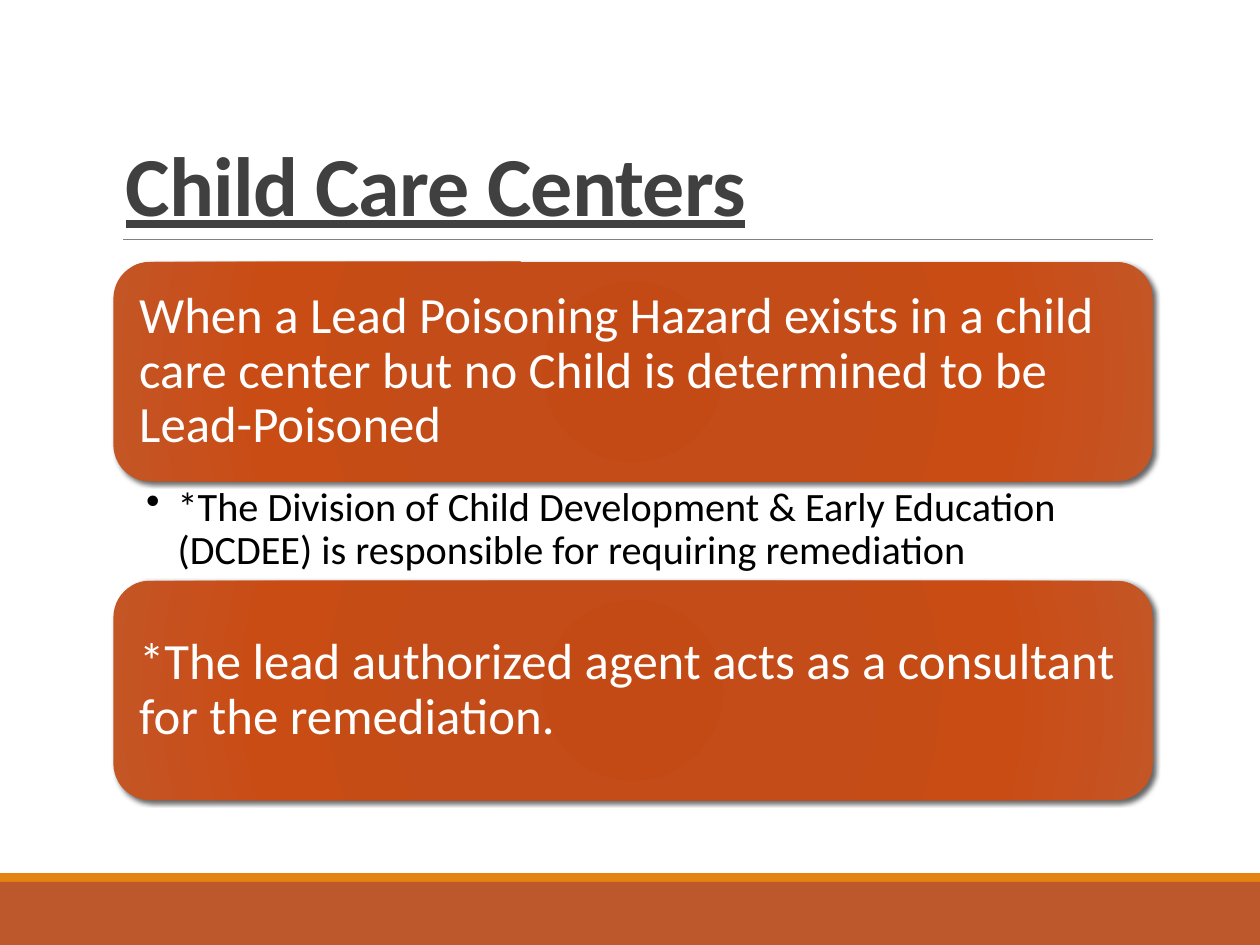
import lxml.etree
import pptx
import pptx.util
import pptx.dml.color
import pptx.enum.shapes
import pptx.enum.text
import pptx.oxml
import pptx.oxml.ns

Inches = pptx.util.Inches
Pt = pptx.util.Pt
qn = pptx.oxml.ns.qn
RGB = pptx.dml.color.RGBColor.from_string
SHAPE = pptx.enum.shapes.MSO_SHAPE
ANCHOR = pptx.enum.text.MSO_ANCHOR
ALIGN = pptx.enum.text.PP_ALIGN

HUES = {
    "title": "404040",
    "rule": "808080",
    "strip": "E48312",
    "foot": "BD582C",
    "white": "FFFFFF",
    "black": "000000",
}
STOPS = [(0, "C44A15"), (34, "C34C18"), (70, "C94C15"), (100, "C45525")]
NS = 'xmlns:a="http://schemas.openxmlformats.org/drawingml/2006/main"'
GLOW = "".join(
    f'<a:gs pos="{pos * 1000}"><a:srgbClr val="{hue}"/></a:gs>' for pos, hue in STOPS
)
GRAD = (
    f'<a:gradFill {NS} rotWithShape="1"><a:gsLst>{GLOW}</a:gsLst><a:path path="circle">'
    '<a:fillToRect l="100000" t="100000" r="100000" b="100000"/></a:path></a:gradFill>'
)
SHADE = (
    f'<a:outerShdw {NS} blurRad="{Pt(3)}" dist="{Pt(2)}" dir="2700000" rotWithShape="0">'
    f'<a:srgbClr val="{HUES["black"]}"><a:alpha val="60000"/></a:srgbClr></a:outerShdw>'
)


def write(shape, text, size, hue, anchor=ANCHOR.TOP, pad=(0.1, 0.05, 0.1, 0.05),
          lead=0.9, bold=False, line=False, track=0, dot=None):
    frame = shape.text_frame
    frame.word_wrap = True
    frame.vertical_anchor = anchor
    frame.margin_left, frame.margin_top, frame.margin_right, frame.margin_bottom = map(Inches, pad)
    para = frame.paragraphs[0]
    para.alignment = ALIGN.LEFT
    para.line_spacing = lead
    run = para.add_run()
    run.text = text
    font = run.font
    font.name = "Calibri"
    font.size = Pt(size)
    font.bold = bold
    font.underline = line
    font.color.rgb = RGB(HUES[hue])
    if track:
        font._element.set("spc", str(int(track * 100)))
    if dot:
        props = para._p.get_or_add_pPr()
        props.set("marL", str(Inches(0.25)))
        props.set("indent", str(Inches(-0.25)))
        lxml.etree.SubElement(props, qn("a:buChar")).set("char", dot)


deck = pptx.Presentation()
deck.slide_width = Inches(10)
deck.slide_height = Inches(7.5)
slide = deck.slides.add_slide(deck.slide_layouts[6])
shapes = slide.shapes

left, width = Inches(0.9), Inches(8.25)

rule = shapes.add_connector(
    pptx.enum.shapes.MSO_CONNECTOR.STRAIGHT,
    Inches(0.98), Inches(1.9), Inches(9.15), Inches(1.9),
)
rule.line.color.rgb = RGB(HUES["rule"])
rule.line.width = Pt(0.5)
lxml.etree.SubElement(rule._element.spPr, qn("a:effectLst"))

title = shapes.add_textbox(left, Inches(0.31), width, Inches(1.59))
write(title, "Child Care Centers", 48, "title", anchor=ANCHOR.BOTTOM,
      lead=0.85, bold=True, line=True, track=-0.5)

for hue, top, high in [("strip", 6.93, 0.07), ("foot", 7, 0.5)]:
    bar = shapes.add_shape(SHAPE.RECTANGLE, 0, Inches(top), Inches(10), Inches(high))
    bar.shadow.inherit = False
    bar.fill.solid()
    bar.fill.fore_color.rgb = RGB(HUES[hue])
    bar.line.fill.background()

cards = [
    (2.08, "When a Lead Poisoning Hazard exists in a child care center "
           "but no Child is determined to be Lead-Poisoned"),
    (4.61, "*The lead authorized agent acts as a consultant for the remediation."),
]
for top, text in cards:
    card = shapes.add_shape(SHAPE.ROUNDED_RECTANGLE, left, Inches(top), width, Inches(1.74))
    card.line.fill.background()
    card.shadow.inherit = False
    props = card._element.spPr
    props.find(qn("a:prstGeom")).addnext(pptx.oxml.parse_xml(GRAD))
    props.find(qn("a:effectLst")).append(pptx.oxml.parse_xml(SHADE))
    write(card, text, 29, "white", anchor=ANCHOR.MIDDLE, pad=(0.12,) * 4)

note = shapes.add_textbox(left, Inches(3.82), width, Inches(0.79))
write(note, "*The Division of Child Development & Early Education (DCDEE) "
      "is responsible for requiring remediation",
      23, "black", pad=(0.26, 0.04, 0.23, 0.04), dot="•")

deck.save("out.pptx")
